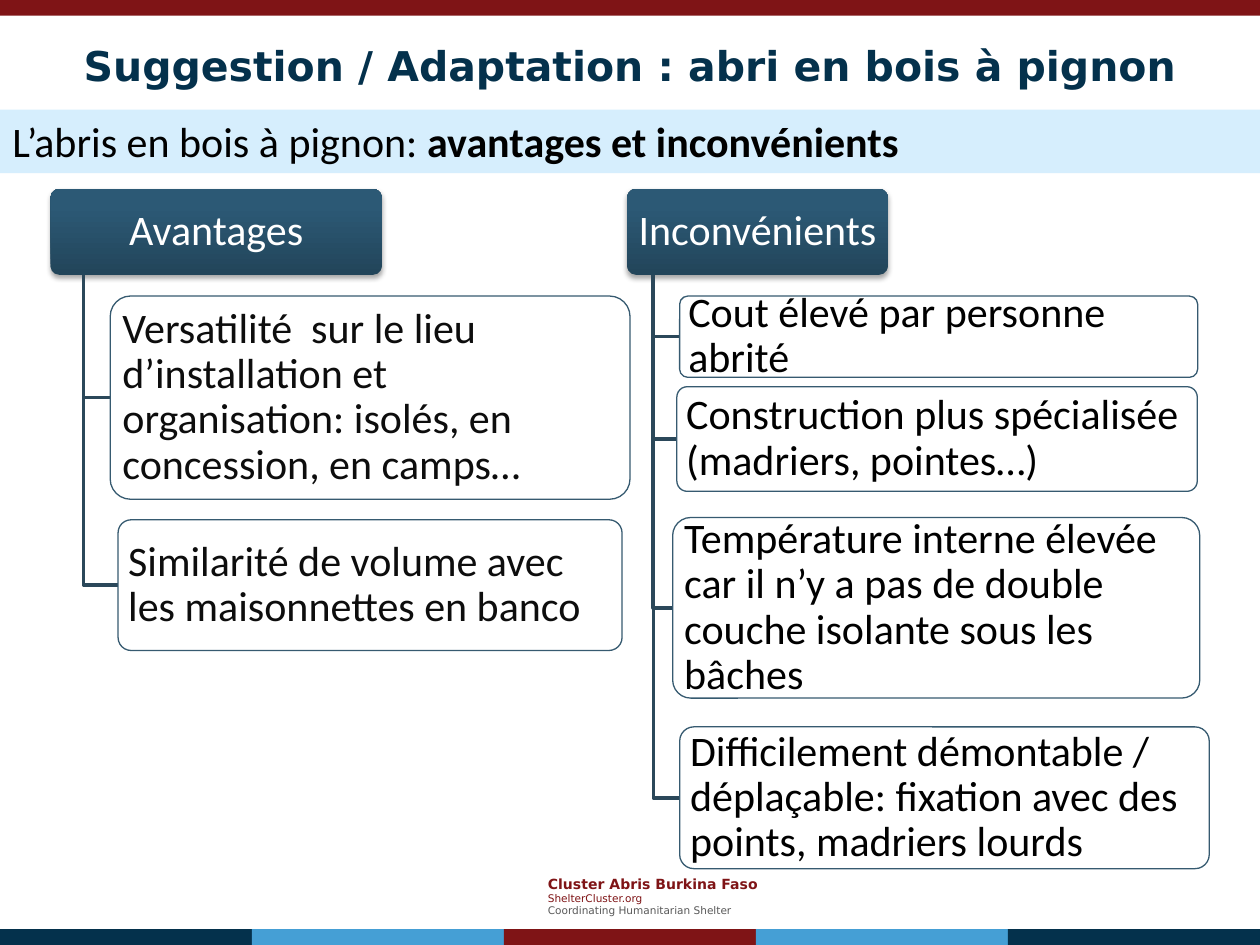
from copy import deepcopy

from lxml import etree
from pptx import Presentation
from pptx.dml import color
from pptx.enum import shapes, text
from pptx.oxml import ns
from pptx.util import Pt

WIDTH, HEIGHT = 720, 540
NAVY, BLUE, RED = "04314C", "459FD5", "7F1416"
HEADER_TOP, HEADER_HEIGHT = 108, 49
HEADER_GRADIENT = [(0, "22455A"), (0.8, "2C5975"), (1, "2B5A77")]

# Each column: title, left, width, text colour, items as (text, left, top, width, height)
COLUMNS = [
    ("Avantages", 28.9, 189.3, "0D0D0D", [
        ("Versatilité  sur le lieu d’installation et organisation: isolés, "
         "en concession, en camps…", 63, 169.2, 297, 116.1),
        ("Similarité de volume avec les maisonnettes en banco",
         67.5, 297, 288, 74.7),
    ]),
    ("Inconvénients", 358.4, 149, "000000", [
        ("Cout élevé par personne abrité", 388.4, 169.2, 296, 46.4),
        ("Construction plus spécialisée (madriers, pointes…)",
         386.8, 221, 297.4, 59.8),
        ("Température interne élevée car il n’y a pas de double couche "
         "isolante sous les bâches", 384.4, 295.7, 301.2, 103.2),
        ("Difficilement démontable / déplaçable: fixation avec des points, "
         "madriers lourds", 388.4, 415.4, 302.6, 81),
    ]),
]


def rgb(value):
    return color.RGBColor.from_string(value)


def style_font(font, name, size, colour, bold=False):
    font.name, font.size, font.bold = name, Pt(size), bold
    font.color.rgb = rgb(colour)


def add_box(slide, kind, box, fill):
    shape = slide.shapes.add_shape(kind, *map(Pt, box))
    shape.shadow.inherit = False
    shape.line.fill.background()
    shape.fill.solid()
    shape.fill.fore_color.rgb = rgb(fill)
    return shape


def add_rounded_text(slide, box, words, colour, alignment):
    shape = add_box(slide, shapes.MSO_SHAPE.ROUNDED_RECTANGLE, box, "FFFFFF")
    shape.adjustments[0] = 0.1
    frame = shape.text_frame
    frame.word_wrap = True
    frame.vertical_anchor = text.MSO_ANCHOR.MIDDLE
    frame.margin_left = frame.margin_right = Pt(3.6)
    frame.margin_top = frame.margin_bottom = Pt(2.4)
    paragraph = frame.paragraphs[0]
    paragraph.text = words
    paragraph.alignment = alignment
    paragraph.line_spacing = 0.9
    style_font(paragraph.font, "Calibri", 24, colour)
    return shape


def add_bands(slide):
    rectangle = shapes.MSO_SHAPE.RECTANGLE
    add_box(slide, rectangle, (0, 0, WIDTH, 9), RED)
    colours = [NAVY, BLUE, RED, BLUE, NAVY]
    width = WIDTH / len(colours)
    for index, colour in enumerate(colours):
        add_box(slide, rectangle, (index * width, HEIGHT - 9, width, 9), colour)


def add_footer(slide, box):
    frame = slide.shapes.add_textbox(*map(Pt, box)).text_frame
    frame.word_wrap = True
    frame.vertical_anchor = text.MSO_ANCHOR.MIDDLE
    lines = [("Cluster Abris Burkina Faso", 8, RED, True),
             ("ShelterCluster.org", 6, RED, False),
             ("Coordinating Humanitarian Shelter", 6, "595959", False)]
    for index, (words, size, colour, bold) in enumerate(lines):
        paragraph = frame.add_paragraph() if index else frame.paragraphs[0]
        paragraph.text = words
        style_font(paragraph.font, "DejaVu Sans", size, colour, bold)


def add_title(slide, box):
    frame = slide.shapes.add_textbox(*map(Pt, box)).text_frame
    frame.word_wrap = True
    frame.vertical_anchor = text.MSO_ANCHOR.MIDDLE
    paragraph = frame.paragraphs[0]
    paragraph.text = "Suggestion / Adaptation : abri en bois à pignon"
    paragraph.alignment = text.PP_ALIGN.CENTER
    style_font(paragraph.font, "DejaVu Sans", 23.4, NAVY, True)


def add_subtitle(slide, box):
    shape = add_box(slide, shapes.MSO_SHAPE.RECTANGLE, box, "D6EEFD")
    frame = shape.text_frame
    frame.word_wrap = True
    frame.vertical_anchor = text.MSO_ANCHOR.TOP
    paragraph = frame.paragraphs[0]
    paragraph.alignment = text.PP_ALIGN.LEFT
    for words, bold in [("L’abris en bois à pignon: ", False),
                        ("avantages et inconvénients", True)]:
        run = paragraph.add_run()
        run.text = words
        style_font(run.font, "Calibri", 24, "000000", bold)


def add_header(slide, box, words):
    shape = add_rounded_text(slide, box, words, "FFFFFF", text.PP_ALIGN.CENTER)
    shape.fill.gradient()
    shape.fill.gradient_angle = 90
    properties = shape.element.spPr
    stops = properties.find(".//" + ns.qn("a:gsLst"))
    stops.append(deepcopy(stops[-1]))
    for stop, (position, colour) in zip(shape.fill.gradient_stops, HEADER_GRADIENT):
        stop.position = position
        stop.color.rgb = rgb(colour)
    shadow = etree.SubElement(
        properties.find(ns.qn("a:effectLst")), ns.qn("a:outerShdw"),
        blurRad=str(Pt(3.1)), dist=str(Pt(1.8)), dir="5400000", rotWithShape="0")
    black = etree.SubElement(shadow, ns.qn("a:srgbClr"), val="000000")
    etree.SubElement(black, ns.qn("a:alpha"), val="35000")


def add_branch(slide, x, top, end_x, end_y):
    """Draw a line down from the header, then right to an item."""
    builder = slide.shapes.build_freeform(Pt(x), Pt(top))
    builder.add_line_segments([(Pt(x), Pt(end_y)), (Pt(end_x), Pt(end_y))], close=False)
    branch = builder.convert_to_shape()
    branch.shadow.inherit = False
    branch.fill.background()
    branch.line.color.rgb = rgb("2B485A")
    branch.line.width = Pt(2)


def add_column(slide, title, left, width, colour, items):
    add_header(slide, (left, HEADER_TOP, width, HEADER_HEIGHT), title)
    stem = left + width / 10
    for words, *box in items:
        item_left, item_top, _, item_height = box
        add_branch(slide, stem, HEADER_TOP + HEADER_HEIGHT,
                   item_left, item_top + item_height / 2)
        item = add_rounded_text(slide, box, words, colour, text.PP_ALIGN.LEFT)
        item.line.color.rgb = rgb("365A70")
        item.line.width = Pt(0.75)


def main():
    presentation = Presentation()
    presentation.slide_width, presentation.slide_height = Pt(WIDTH), Pt(HEIGHT)
    slide = presentation.slides.add_slide(presentation.slide_layouts[6])
    add_footer(slide, (306, 496, 137, 32))
    add_bands(slide)
    add_subtitle(slide, (0, 62.6, WIDTH, 36.3))
    add_title(slide, (0, 19, WIDTH, 36))
    for column in COLUMNS:
        add_column(slide, *column)
    presentation.save("out.pptx")


if __name__ == "__main__":
    main()
